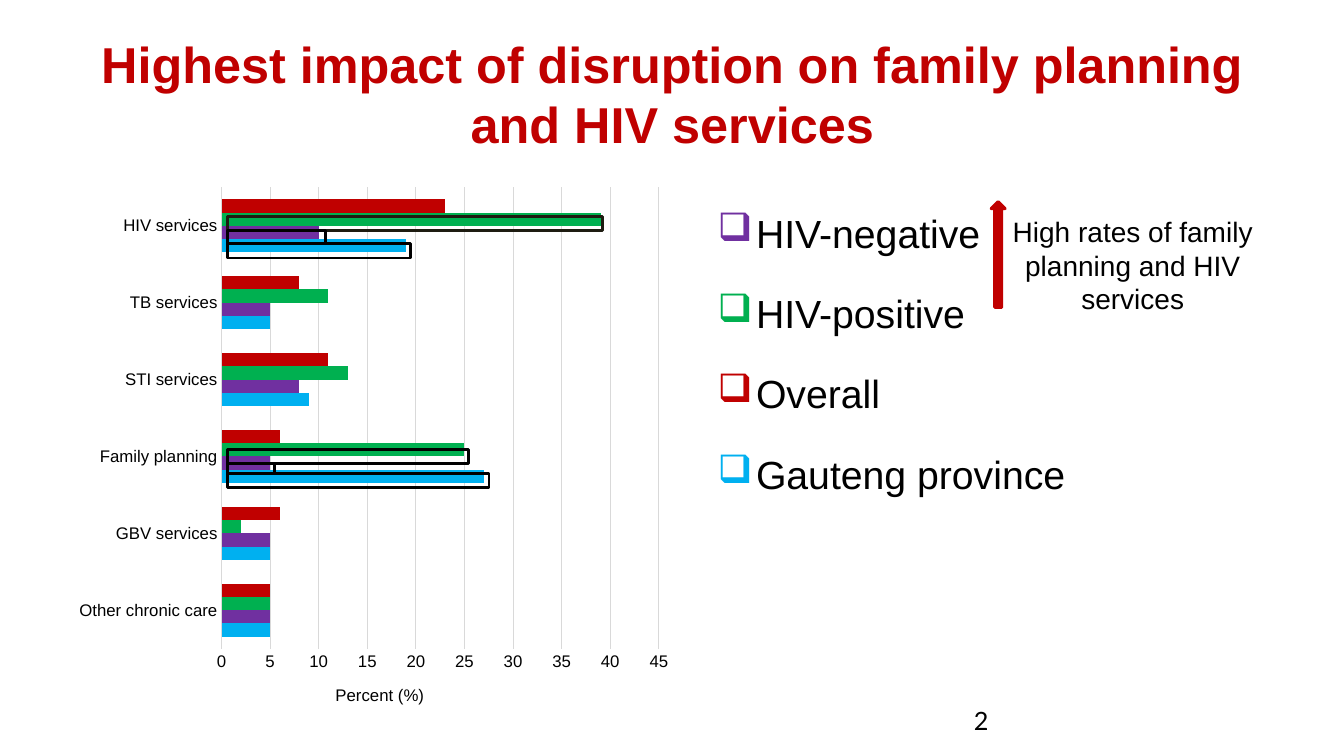
from lxml import etree
from pptx import Presentation
from pptx.chart.data import CategoryChartData
from pptx.dml.color import RGBColor
from pptx.enum.chart import XL_CHART_TYPE, XL_TICK_MARK
from pptx.enum.shapes import MSO_SHAPE
from pptx.enum.text import MSO_ANCHOR, PP_ALIGN
from pptx.oxml import parse_xml
from pptx.oxml.ns import nsdecls, qn
from pptx.util import Inches, Pt

COLORS = {
    "red": "C00000",
    "green": "00B050",
    "purple": "7030A0",
    "blue": "00B0F0",
    "black": "000000",
    "dark": "1E1C11",
    "grid": "D9D9D9",
}


def add_text(box, lines, size, font="Arial", color="black", bold=False, align=PP_ALIGN.LEFT):
    shape = slide.shapes.add_textbox(*[Inches(length) for length in box])
    frame = shape.text_frame
    frame.word_wrap = True
    frame.text = "\n".join(lines)
    for paragraph in frame.paragraphs:
        paragraph.alignment = align
        for run in paragraph.runs:
            run.font.name = font
            run.font.size = Pt(size)
            run.font.bold = bold
            run.font.color.rgb = RGBColor.from_string(COLORS[color])
    return frame


def layout_xml(**values):
    parts = "".join(f'<c:{name} val="{value}"/>' for name, value in values.items())
    return parse_xml(f'<c:layout {nsdecls("c")}><c:manualLayout>{parts}</c:manualLayout></c:layout>')


presentation = Presentation()
presentation.slide_width = Inches(13.33)
presentation.slide_height = Inches(7.5)
slide = presentation.slides.add_slide(presentation.slide_layouts[6])

title = add_text(
    (0.67, 0.3, 12, 1.25),
    ["Highest impact of disruption on family planning and HIV services"],
    36, color="red", bold=True, align=PP_ALIGN.CENTER,
)
title.vertical_anchor = MSO_ANCHOR.MIDDLE

groups = [
    ("HIV-negative", "purple"),
    ("HIV-positive", "green"),
    ("Overall", "red"),
    ("Gauteng province", "blue"),
]
legend = add_text((7.02, 1.79, 5.89, 4.91), [name for name, color in groups], 28)
for index, (paragraph, (name, color)) in enumerate(zip(legend.paragraphs, groups)):
    properties = paragraph._p.get_or_add_pPr()
    properties.set("marL", str(Inches(0.38)))
    properties.set("indent", str(-Inches(0.38)))
    bullet_color = etree.SubElement(properties, qn("a:buClr"))
    etree.SubElement(bullet_color, qn("a:srgbClr"), val=COLORS[color])
    etree.SubElement(properties, qn("a:buChar"), char="❑")
    paragraph.line_spacing = 1.5
    if index:
        paragraph.space_before = Pt(7)

add_text((9.56, 6.95, 3.11, 0.4), ["2"], 18, font="Lato")
add_text(
    (9.76, 2.08, 2.95, 1.11),
    ["High rates of family planning and HIV services"],
    20, align=PP_ALIGN.CENTER,
)

arrow = slide.shapes.add_shape(
    MSO_SHAPE.UP_ARROW, Inches(9.83), Inches(2), Inches(0.14), Inches(1.05)
)
arrow.shadow.inherit = False
arrow.fill.solid()
arrow.fill.fore_color.rgb = RGBColor.from_string(COLORS["red"])
arrow.line.color.rgb = RGBColor.from_string(COLORS["red"])
arrow.line.width = Pt(2)

chart_data = CategoryChartData()
chart_data.categories = [
    "Other chronic care", "GBV services", "Family planning",
    "STI services", "TB services", "HIV services",
]
series_rows = [
    ("Gauteng province", "blue", (5, 5, 27, 9, 5, 19)),
    ("HIV-negative", "purple", (5, 5, 5, 8, 5, 10)),
    ("HIV-positive", "green", (5, 2, 25, 13, 11, 39)),
    ("Overall", "red", (5, 6, 6, 11, 8, 23)),
]
for name, color, values in series_rows:
    chart_data.add_series(name, values)
chart = slide.shapes.add_chart(
    XL_CHART_TYPE.BAR_CLUSTERED,
    Inches(0.67), Inches(1.75), Inches(6.11), Inches(5.45), chart_data,
).chart
chart.has_legend = False
chart.has_title = False
chart.font.name = "Arial"
chart.font.size = Pt(12)
chart.font.color.rgb = RGBColor.from_string(COLORS["black"])

plot = chart.plots[0]
plot.gap_width = 182
plot.overlap = 0
plot.vary_by_categories = False
for series, (name, color, values) in zip(plot.series, series_rows):
    series.format.fill.solid()
    series.format.fill.fore_color.rgb = RGBColor.from_string(COLORS[color])

plot_area = chart._chartSpace.chart.plotArea
for old_layout in plot_area.findall(qn("c:layout")):
    plot_area.remove(old_layout)
plot_area.insert(0, layout_xml(
    layoutTarget="inner", xMode="edge", yMode="edge", x=0.25, y=0.02, w=0.71, h=0.84
))

category_axis = chart.category_axis
value_axis = chart.value_axis
for axis in (category_axis, value_axis):
    axis.major_tick_mark = XL_TICK_MARK.NONE
    axis.minor_tick_mark = XL_TICK_MARK.NONE
value_axis.minimum_scale = 0
value_axis.maximum_scale = 45
value_axis.major_unit = 5
value_axis.tick_labels.number_format = "0"
value_axis.tick_labels.number_format_is_linked = False
value_axis.format.line.fill.background()
value_axis.has_major_gridlines = True
for line in (category_axis.format.line, value_axis.major_gridlines.format.line):
    line.color.rgb = RGBColor.from_string(COLORS["grid"])
    line.width = Pt(0.75)

axis_title = value_axis.axis_title
axis_title.text_frame.text = "Percent (%)"
title_font = axis_title.text_frame.paragraphs[0].runs[0].font
title_font.name = "Arial"
title_font.size = Pt(12)
title_font.bold = False
title_font.color.rgb = RGBColor.from_string(COLORS["black"])
title_element = axis_title._element
for old_layout in title_element.findall(qn("c:layout")):
    title_element.remove(old_layout)
title_element.find(qn("c:tx")).addnext(
    layout_xml(xMode="edge", yMode="edge", x=0.43, y=0.92)
)

highlights = [
    (2.15, 3.72, 0.14, "dark"),
    (4.46, 2.39, 0.14, "black"),
    (4.7, 2.59, 0.14, "black"),
    (2.42, 1.81, 0.14, "black"),
    (2.29, 0.97, 0.13, "black"),
    (4.6, 0.46, 0.1, "black"),
]
for top, width, height, color in highlights:
    outline = slide.shapes.add_shape(
        MSO_SHAPE.RECTANGLE, Inches(2.26), Inches(top), Inches(width), Inches(height)
    )
    outline.shadow.inherit = False
    outline.fill.background()
    outline.line.color.rgb = RGBColor.from_string(COLORS[color])
    outline.line.width = Pt(2)

presentation.save("out.pptx")
